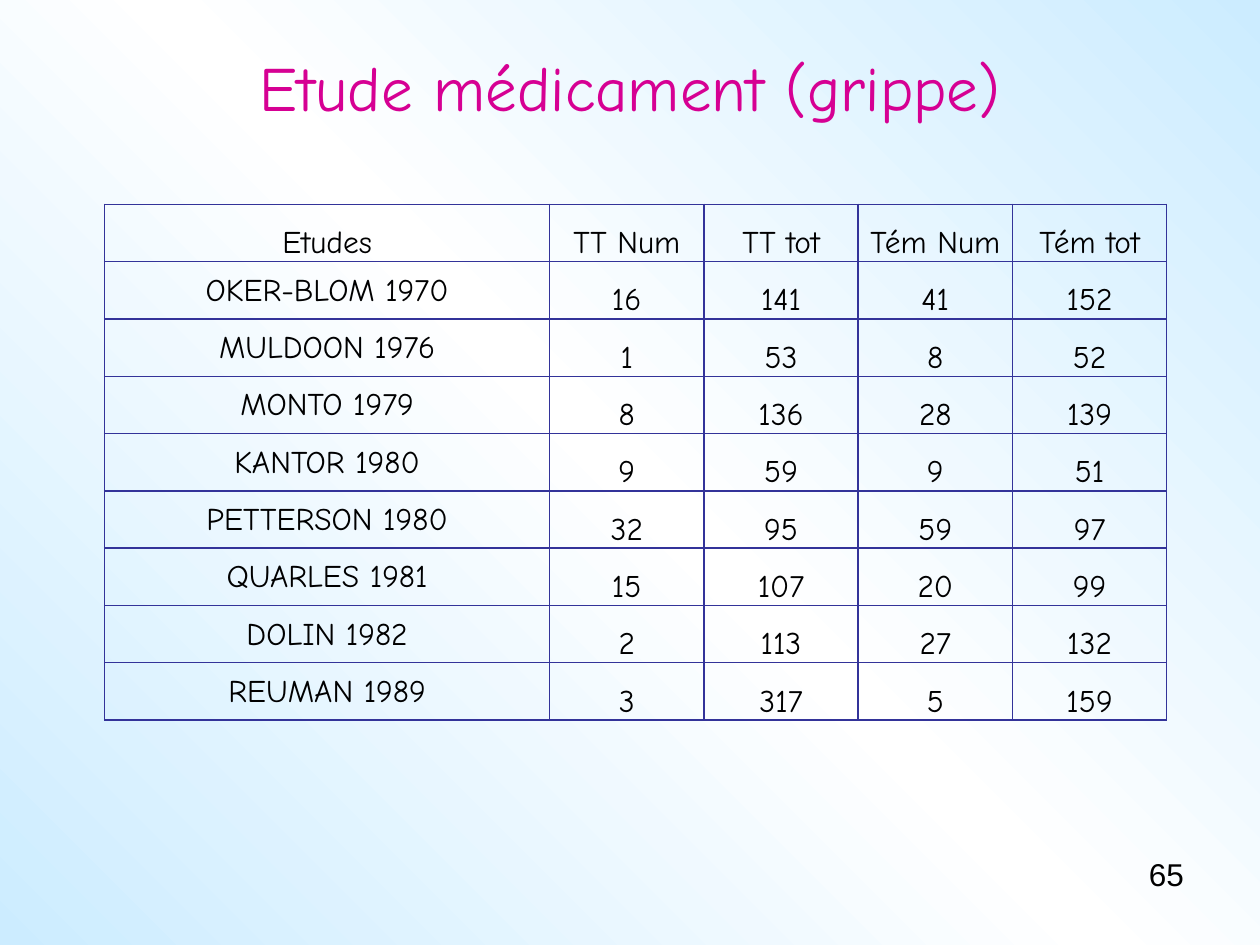
import copy
import lxml.etree
import pptx
import pptx.util
import pptx.dml.color
import pptx.enum.text
import pptx.oxml
import pptx.oxml.ns

Cm = pptx.util.Cm
Pt = pptx.util.Pt
Mid = pptx.enum.text.MSO_ANCHOR.MIDDLE
Low = pptx.enum.text.MSO_ANCHOR.BOTTOM
Align = pptx.enum.text.PP_ALIGN


def tint(code):
    return pptx.dml.color.RGBColor.from_string(code)


def write(frame, text, size=18, font="Comic Neue", color="000000", align=Align.CENTER):
    para = frame.paragraphs[0]
    para.alignment = align
    run = para.add_run()
    run.text = text
    run.font.size = Pt(size)
    run.font.name = font
    run.font.color.rgb = tint(color)


deck = pptx.Presentation()
deck.slide_width, deck.slide_height = Cm(25.4), Cm(19.05)
slide = deck.slides.add_slide(deck.slide_layouts[5])

fill = slide.background.fill
fill.gradient()
fill.gradient_angle = 45
stops = slide._element.find(".//" + pptx.oxml.ns.qn("a:gsLst"))
stops.append(copy.deepcopy(stops[-1]))
for stop, (place, code) in zip(fill.gradient_stops, [(0, "CCECFF"), (0.5, "FFFFFF"), (1, "CCECFF")]):
    stop.position = place
    stop.color.rgb = tint(code)

title = slide.shapes.title
title.left, title.top, title.width, title.height = Cm(1.27), Cm(0.76), Cm(22.86), Cm(1.96)
title.text_frame.vertical_anchor = Mid
write(title.text_frame, "Etude médicament (grippe)", size=36, color="D60093")

rows = [
    ("Etudes", "TT Num", "TT tot", "Tém Num", "Tém tot"),
    ("OKER-BLOM 1970", 16, 141, 41, 152),
    ("MULDOON 1976", 1, 53, 8, 52),
    ("MONTO 1979", 8, 136, 28, 139),
    ("KANTOR 1980", 9, 59, 9, 51),
    ("PETTERSON 1980", 32, 95, 59, 97),
    ("QUARLES 1981", 15, 107, 20, 99),
    ("DOLIN 1982", 2, 113, 27, 132),
    ("REUMAN 1989", 3, 317, 5, 159),
]
wide = [8.97] + [3.11] * 4
table = slide.shapes.add_table(len(rows), len(wide), Cm(2.11), Cm(4.12), Cm(sum(wide)), Cm(10.4)).table
table.first_row = table.horz_banding = False
for col, width in zip(table.columns, wide):
    col.width = Cm(width)

space = pptx.oxml.ns.nsdecls("a")
for r, row in enumerate(rows):
    for c, value in enumerate(row):
        cell = table.cell(r, c)
        cell.margin_left = cell.margin_right = cell.margin_top = Cm(0.03)
        cell.margin_bottom = 0
        cell.vertical_anchor = Mid if r and c == 0 else Low
        cell.fill.background()
        write(cell.text_frame, str(value))
        props = cell._tc.get_or_add_tcPr()
        for i, side in enumerate("LRTB"):
            props.insert(i, pptx.oxml.parse_xml(
                f'<a:ln{side} {space} w="{Pt(1)}"><a:solidFill>'
                f'<a:srgbClr val="333399"/></a:solidFill></a:ln{side}>'))

page = slide.shapes.add_textbox(Cm(22.91), Cm(17.12), Cm(1.8), Cm(1.02)).text_frame
page.word_wrap = True
write(page, "65", font="Arial", align=Align.LEFT)

deck.save("out.pptx")
